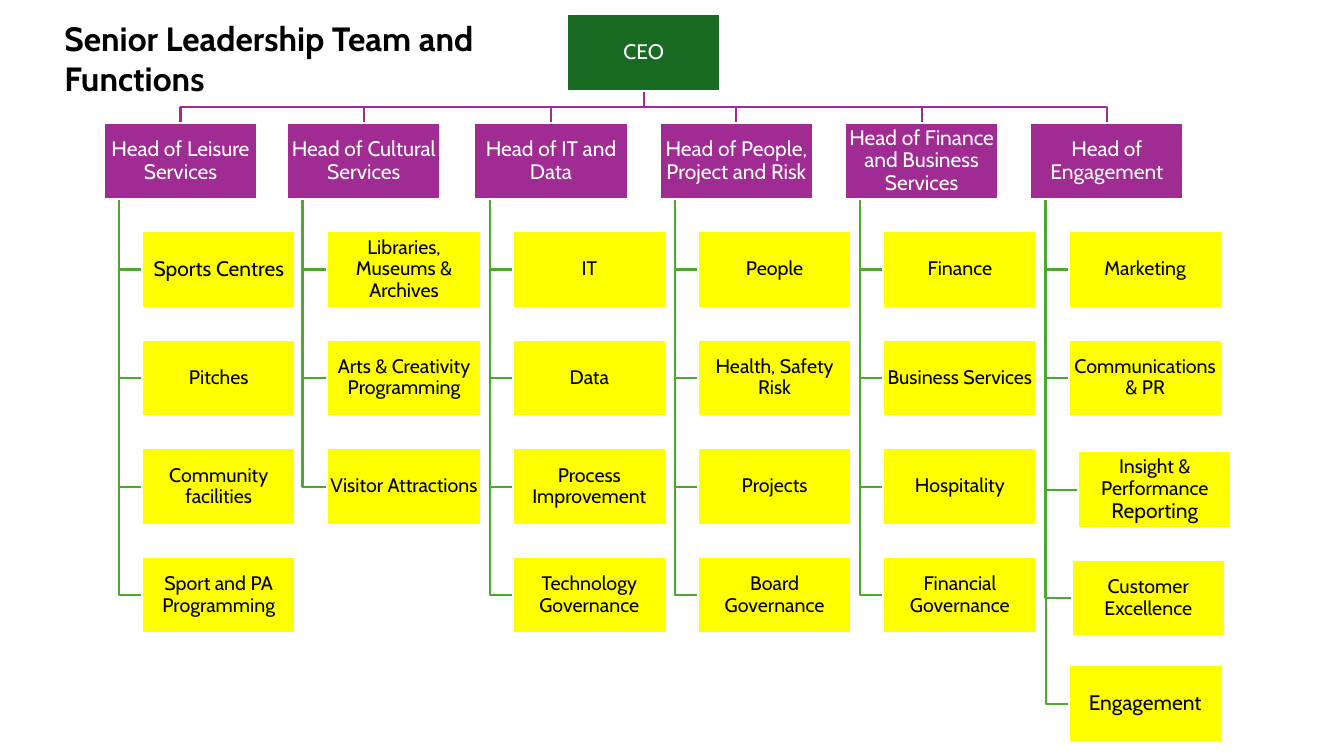
from dataclasses import dataclass

from pptx import Presentation
from pptx.dml.color import RGBColor as RGB
from pptx.enum.shapes import MSO_SHAPE as Shape
from pptx.enum.text import MSO_ANCHOR as Anchor, MSO_AUTO_SIZE as AutoSize, PP_ALIGN as Align
from pptx.util import Inches, Pt

UNIT = Inches(0.38)


@dataclass(frozen=True)
class Theme:
    font: str = "Cabin"
    ceo: RGB = RGB(0x19, 0x6B, 0x24)
    head: RGB = RGB(0xA0, 0x2B, 0x93)
    role: RGB = RGB(0xFF, 0xFF, 0x00)
    branch: RGB = RGB(0x4E, 0xA7, 0x2E)
    light: RGB = RGB(0xFF, 0xFF, 0xFF)
    dark: RGB = RGB(0x00, 0x00, 0x00)
    title_size: int = 24
    large: int = 15
    small: int = 14
    line: float = 1.5
    spacing: float = 0.9
    inset: float = 0.01


@dataclass(frozen=True)
class Box:
    x: float
    y: float
    w: float
    h: float

    @property
    def emu(self):
        return [round(v * UNIT) for v in (self.x, self.y, self.w, self.h)]

    @property
    def mid_x(self):
        return self.x + self.w / 2

    @property
    def mid_y(self):
        return self.y + self.h / 2

    @property
    def bottom(self):
        return self.y + self.h


@dataclass(frozen=True)
class Role:
    text: str
    size: int = 14
    dx: float = 0
    dy: float = 0
    tail: str = ""


@dataclass(frozen=True)
class Team:
    head: str
    roles: tuple
    dx: float = 0


THEME = Theme()
TITLE_BOX = Box(1.42, 0.34, 11.97, 2.39)
CHART_BOX = Box(2.71, 0.37, 29.18, 19)
CARD_W, CARD_H = 4, 2
INDENT, RAIL = 1, 0.4
ROWS = 7

TEAMS = (
    Team("Head of Leisure Services", (
        Role("Sports Centres", THEME.large), Role("Pitches"),
        Role("Community facilities"), Role("Sport and PA Programming"))),
    Team("Head of Cultural Services", (
        Role("Libraries, Museums & Archives"), Role("Arts & Creativity Programming"),
        Role("Visitor Attractions")), dx=-0.05),
    Team("Head of IT and Data", (
        Role("IT"), Role("Data"), Role("Process Improvement"),
        Role("Technology Governance"))),
    Team("Head of People, Project and Risk", (
        Role("People"), Role("Health, Safety Risk"), Role("Projects"),
        Role("Board Governance"))),
    Team("Head of Finance and Business Services", (
        Role("Finance"), Role("Business Services"), Role("Hospitality"),
        Role("Financial Governance"))),
    Team("Head of Engagement", (
        Role("Marketing"), Role("Communications & PR"),
        Role("Insight & Performance", dx=0.25, dy=0.08, tail=" Reporting"),
        Role("Customer Excellence", dx=0.08, dy=0.08),
        Role("Engagement", THEME.large))),
)


def style_run(r, size, color, bold=False):
    r.font.name = THEME.font
    r.font.size = Pt(size)
    r.font.bold = bold
    r.font.color.rgb = color


def add_title(slide, box, text):
    tf = slide.shapes.add_textbox(*box.emu).text_frame
    tf.word_wrap = True
    tf.auto_size = AutoSize.SHAPE_TO_FIT_TEXT
    tf.text = text
    style_run(tf.paragraphs[0].runs[0], THEME.title_size, THEME.dark, bold=True)


def add_card(slide, box, text, fill, color, size, tail=""):
    sp = slide.shapes.add_shape(Shape.RECTANGLE, *box.emu)
    sp.shadow.inherit = False
    sp.fill.solid()
    sp.fill.fore_color.rgb = fill
    sp.line.color.rgb = THEME.light
    sp.line.width = Pt(THEME.line)
    tf = sp.text_frame
    tf.word_wrap = True
    tf.vertical_anchor = Anchor.MIDDLE
    tf.margin_left = tf.margin_right = tf.margin_top = tf.margin_bottom = Inches(THEME.inset)
    tf.text = text
    p = tf.paragraphs[0]
    p.alignment = Align.CENTER
    p.line_spacing = THEME.spacing
    style_run(p.runs[0], size, color)
    if tail:
        r = p.add_run()
        r.text = tail
        style_run(r, THEME.large, color)


def add_link(slide, points, color):
    start, *rest = [(round(x * UNIT), round(y * UNIT)) for x, y in points]
    builder = slide.shapes.build_freeform(*start)
    builder.add_line_segments(rest, close=False)
    sp = builder.convert_to_shape()
    sp.shadow.inherit = False
    sp.fill.background()
    sp.line.color.rgb = color
    sp.line.width = Pt(THEME.line)


def add_team(slide, head, team, column_x, row_step):
    boxes = [Box(column_x + INDENT + role.dx, head.y + i * row_step + role.dy, CARD_W, CARD_H)
             for i, role in enumerate(team.roles, 1)]
    rail = head.x + RAIL
    for box in boxes:
        add_link(slide, [(rail, head.bottom), (rail, box.mid_y), (box.x, box.mid_y)],
                 THEME.branch)
    add_card(slide, head, team.head, THEME.head, THEME.light, THEME.large)
    for box, role in zip(boxes, team.roles):
        add_card(slide, box, role.text, THEME.role, THEME.dark, role.size, role.tail)


def add_org_chart(slide, area, top, teams):
    column_step = (area.w - CARD_W - INDENT) / (len(teams) - 1)
    row_step = (area.h - CARD_H) / (ROWS - 1)
    columns = [area.x + i * column_step for i in range(len(teams))]
    heads = [Box(x + team.dx, area.y + row_step, CARD_W, CARD_H)
             for x, team in zip(columns, teams)]
    ceo = Box((columns[0] + columns[-1]) / 2, area.y, CARD_W, CARD_H)
    bar = (ceo.bottom + heads[0].y) / 2
    for head in heads:
        add_link(slide, [(ceo.mid_x, ceo.bottom), (ceo.mid_x, bar),
                         (head.mid_x, bar), (head.mid_x, head.y)], THEME.head)
    add_card(slide, ceo, top, THEME.ceo, THEME.light, THEME.large)
    for head, team, x in zip(heads, teams, columns):
        add_team(slide, head, team, x, row_step)


def main():
    prs = Presentation()
    prs.slide_width, prs.slide_height = Inches(13.33), Inches(7.5)
    slide = prs.slides.add_slide(prs.slide_layouts[6])
    add_org_chart(slide, CHART_BOX, "CEO", TEAMS)
    add_title(slide, TITLE_BOX, "Senior Leadership Team and Functions")
    prs.save("out.pptx")


if __name__ == "__main__":
    main()
